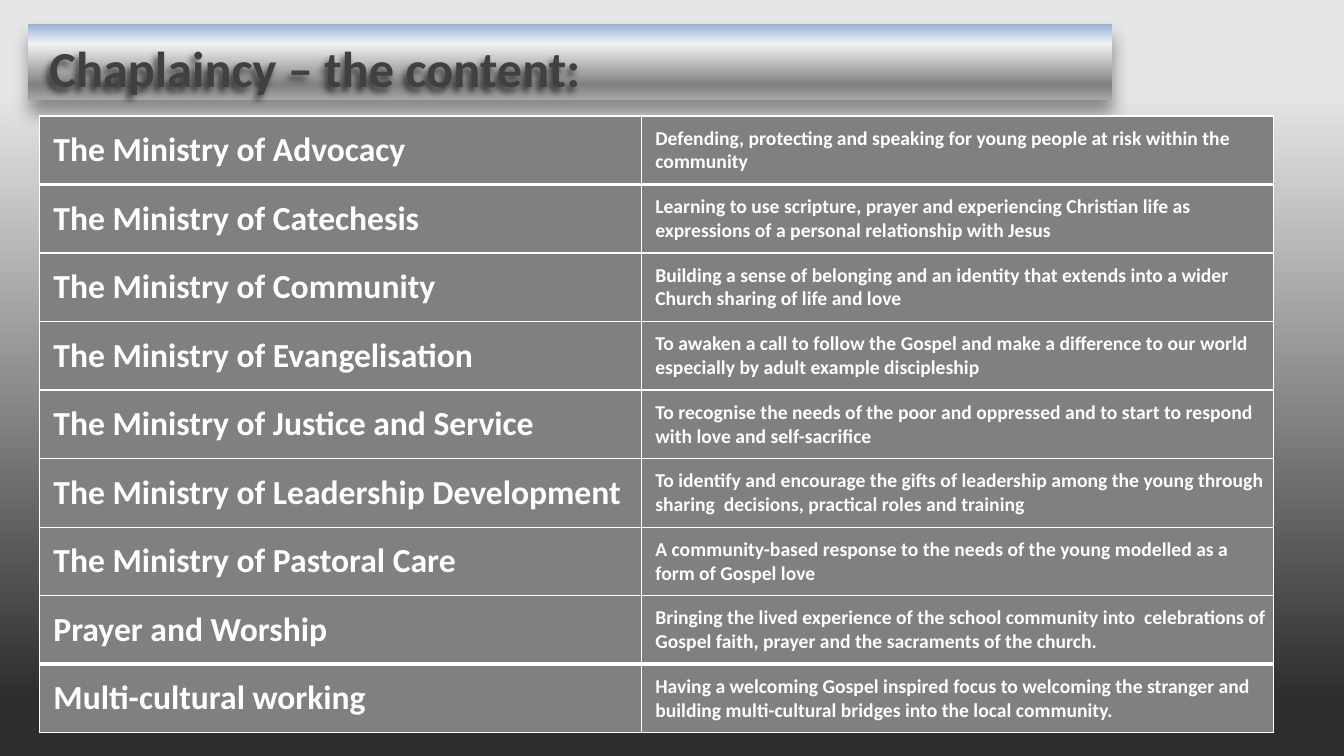
from typing import NamedTuple

from lxml import etree
from pptx import Presentation
from pptx import util as u
from pptx.dml.color import RGBColor
from pptx.enum import shapes, text
from pptx.oxml.ns import qn

EMU_PER_PX = 9144
FONT = "Calibri"
WHITE = RGBColor(0xFF, 0xFF, 0xFF)
BLACK = RGBColor(0x00, 0x00, 0x00)
CHARCOAL = RGBColor(0x40, 0x40, 0x40)
GREY = RGBColor(0x80, 0x80, 0x80)
MID_GREY = RGBColor(0xA6, 0xA6, 0xA6)
PALE_GREY = RGBColor(0xF2, 0xF2, 0xF2)
SKY = RGBColor(0x95, 0xB3, 0xD7)
BACKDROP_LIGHT = RGBColor(0xE7, 0xE6, 0xE6)
BACKDROP_DARK = RGBColor(0x2E, 0x2E, 0x2E)


class Stop(NamedTuple):
    percent: int
    color: RGBColor


class Shadow(NamedTuple):
    opacity: int
    blur: int
    distance: int
    angle: int


class Ministry(NamedTuple):
    name: str
    purpose: str


BACKDROP = [Stop(12, BACKDROP_LIGHT), Stop(92, BACKDROP_DARK)]
BANNER = [Stop(0, SKY), Stop(26, PALE_GREY), Stop(80, GREY), Stop(100, MID_GREY)]
BANNER_SHADOW = Shadow(40, 12, 9, 90)
HEADING_SHADOW = Shadow(60, 5, 4, 135)

MINISTRIES = [
    Ministry("The Ministry of Advocacy",
             "Defending, protecting and speaking for young people at risk within the community"),
    Ministry("The Ministry of Catechesis",
             "Learning to use scripture, prayer and experiencing Christian life as "
             "expressions of a personal relationship with Jesus"),
    Ministry("The Ministry of Community",
             "Building a sense of belonging and an identity that extends into a wider "
             "Church sharing of life and love"),
    Ministry("The Ministry of Evangelisation",
             "To awaken a call to follow the Gospel and make a difference to our world "
             "especially by adult example discipleship"),
    Ministry("The Ministry of Justice and Service",
             "To recognise the needs of the poor and oppressed and to start to respond "
             "with love and self-sacrifice"),
    Ministry("The Ministry of Leadership Development",
             "To identify and encourage the gifts of leadership among the young through "
             "sharing  decisions, practical roles and training"),
    Ministry("The Ministry of Pastoral Care",
             "A community-based response to the needs of the young modelled as a "
             "form of Gospel love"),
    Ministry("Prayer and Worship",
             "Bringing the lived experience of the school community into  celebrations of "
             "Gospel faith, prayer and the sacraments of the church."),
    Ministry("Multi-cultural working",
             "Having a welcoming Gospel inspired focus to welcoming the stranger and "
             "building multi-cultural bridges into the local community."),
]
COLUMN_WIDTHS = (597, 627)
COLUMN_SIZES = (24, 14)
ROW_HEIGHT = 68
CELL_INSET = 7


def px(length: int) -> u.Emu:
    return u.Emu(length * EMU_PER_PX)


def add_color(parent, color: RGBColor):
    return etree.SubElement(parent, qn("a:srgbClr"), val=str(color))


def fill_gradient(fill, owner, stops: list[Stop]) -> None:
    fill.gradient()
    fill.gradient_angle = 270
    stop_list = next(owner.iter(qn("a:gsLst")))
    for default_stop in list(stop_list):
        stop_list.remove(default_stop)
    for stop in stops:
        entry = etree.SubElement(stop_list, qn("a:gs"), pos=str(stop.percent * 1000))
        add_color(entry, stop.color)


def cast_shadow(shape, shadow: Shadow) -> None:
    shape.shadow.inherit = False
    effects = shape.element.spPr.find(qn("a:effectLst"))
    outer = etree.SubElement(
        effects, qn("a:outerShdw"), blurRad=str(u.Pt(shadow.blur)),
        dist=str(u.Pt(shadow.distance)), dir=str(shadow.angle * 60000),
        algn="ctr", rotWithShape="0")
    color = add_color(outer, BLACK)
    etree.SubElement(color, qn("a:alpha"), val=str(shadow.opacity * 1000))


def set_font(paragraph, size: int, color: RGBColor) -> None:
    font = paragraph.font
    font.name, font.size, font.bold = FONT, u.Pt(size), True
    font.color.rgb = color


def set_borders(cell, top: int, bottom: int) -> None:
    properties = cell._tc.get_or_add_tcPr()
    widths = {"a:lnL": 1, "a:lnR": 1, "a:lnT": top, "a:lnB": bottom}
    for position, (side, width) in enumerate(widths.items()):
        line = etree.Element(qn(side), w=str(u.Pt(width)))
        add_color(etree.SubElement(line, qn("a:solidFill")), WHITE)
        properties.insert(position, line)


def fill_cell(cell, wording: str, size: int) -> None:
    cell.fill.solid()
    cell.fill.fore_color.rgb = GREY
    cell.vertical_anchor = text.MSO_ANCHOR.MIDDLE
    cell.margin_left = cell.margin_right = px(CELL_INSET)
    cell.margin_top = cell.margin_bottom = 0
    cell.text = wording
    paragraph = cell.text_frame.paragraphs[0]
    paragraph._p.get_or_add_pPr().set("marL", str(px(CELL_INSET)))
    set_font(paragraph, size, WHITE)


def add_heading(slide) -> None:
    banner = slide.shapes.add_shape(
        shapes.MSO_SHAPE.RECTANGLE, px(28), px(24), px(1075), px(75))
    fill_gradient(banner.fill, banner.element, BANNER)
    banner.line.fill.background()
    cast_shadow(banner, BANNER_SHADOW)

    heading = slide.shapes.title
    heading.left, heading.top, heading.width, heading.height = map(px, (39, 32, 800, 57))
    banner.element.addnext(heading.element)
    frame = heading.text_frame
    frame.text = "Chaplaincy – the content:"
    frame.word_wrap = False
    frame.auto_size = text.MSO_AUTO_SIZE.NONE
    frame.vertical_anchor = text.MSO_ANCHOR.TOP
    frame.paragraphs[0].alignment = text.PP_ALIGN.LEFT
    set_font(frame.paragraphs[0], 36, CHARCOAL)
    cast_shadow(heading, HEADING_SHADOW)


def add_ministries(slide) -> None:
    count = len(MINISTRIES)
    grid = slide.shapes.add_table(
        count, len(COLUMN_WIDTHS), px(39), px(115),
        px(sum(COLUMN_WIDTHS)), px(ROW_HEIGHT * count)).table
    grid.first_row = grid.horz_banding = False
    for column, width in zip(grid.columns, COLUMN_WIDTHS):
        column.width = px(width)
    thick_rules = {1, count - 1}
    for index, (row, ministry) in enumerate(zip(grid.rows, MINISTRIES)):
        row.height = px(ROW_HEIGHT)
        top, bottom = (3 if rule in thick_rules else 1 for rule in (index, index + 1))
        for cell, wording, size in zip(row.cells, ministry, COLUMN_SIZES):
            fill_cell(cell, wording, size)
            set_borders(cell, top, bottom)


def main() -> None:
    deck = Presentation()
    deck.slide_width, deck.slide_height = px(1333), px(750)
    slide = deck.slides.add_slide(deck.slide_layouts[5])
    fill_gradient(slide.background.fill, slide.element, BACKDROP)
    add_heading(slide)
    add_ministries(slide)
    deck.save("out.pptx")


if __name__ == "__main__":
    main()
